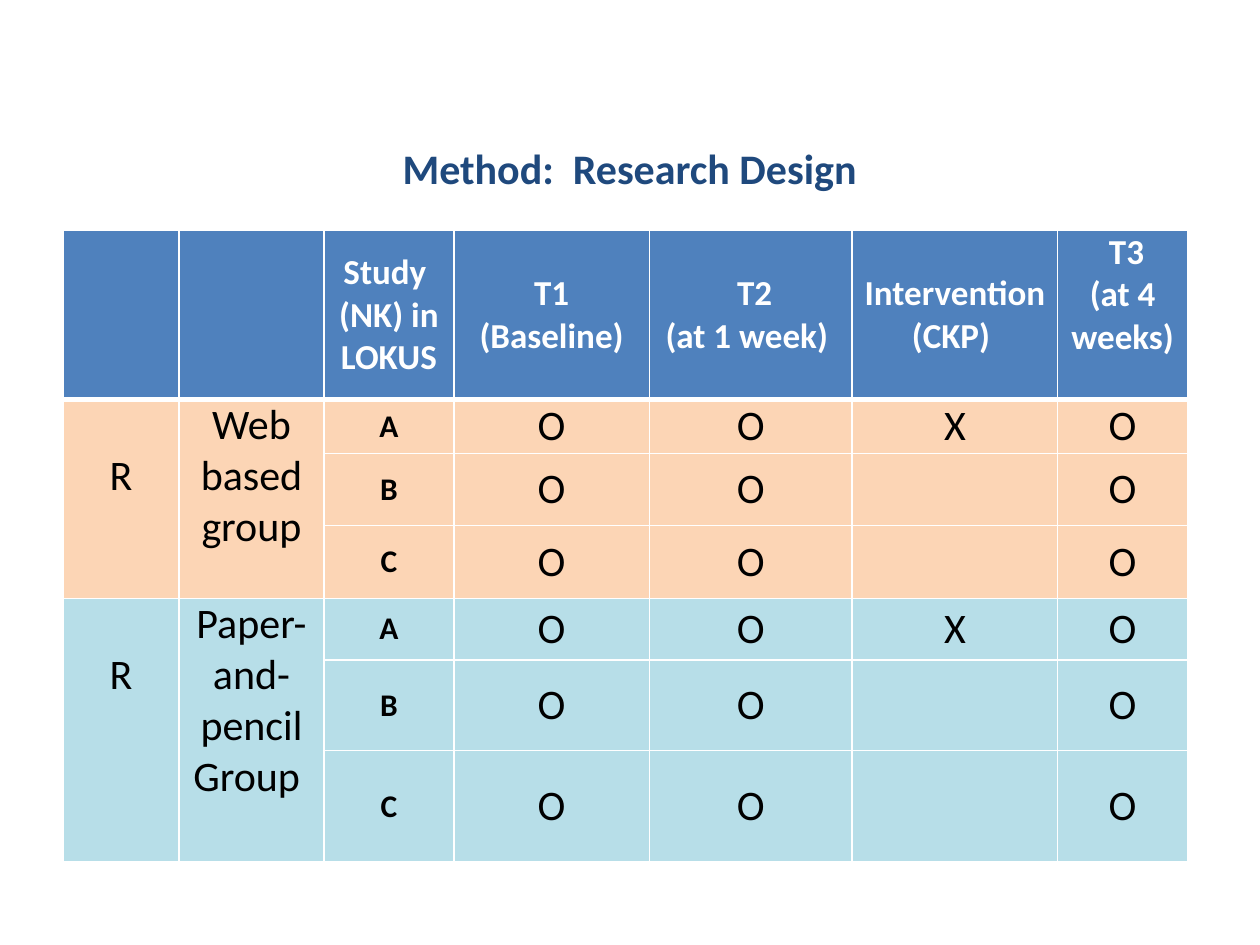
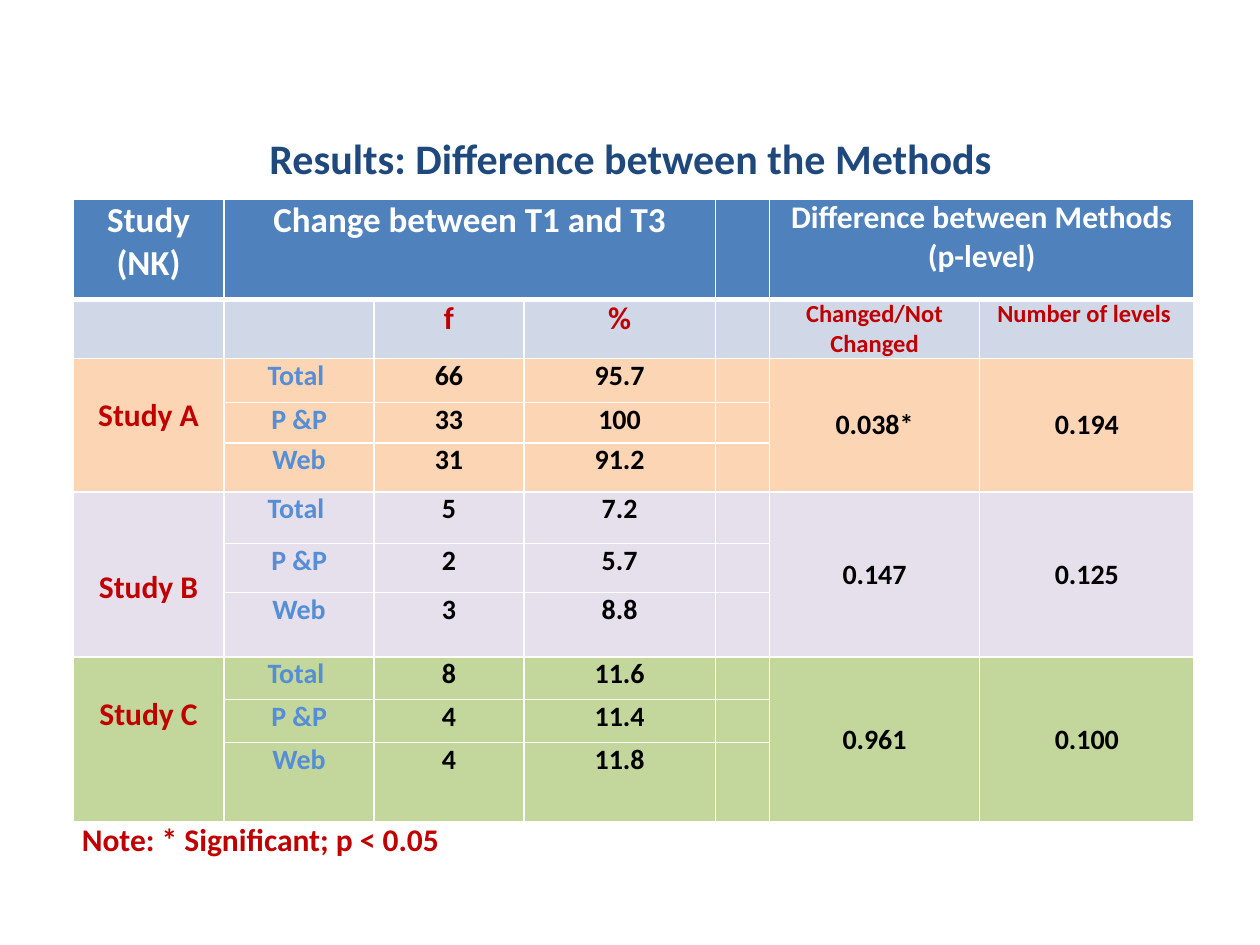
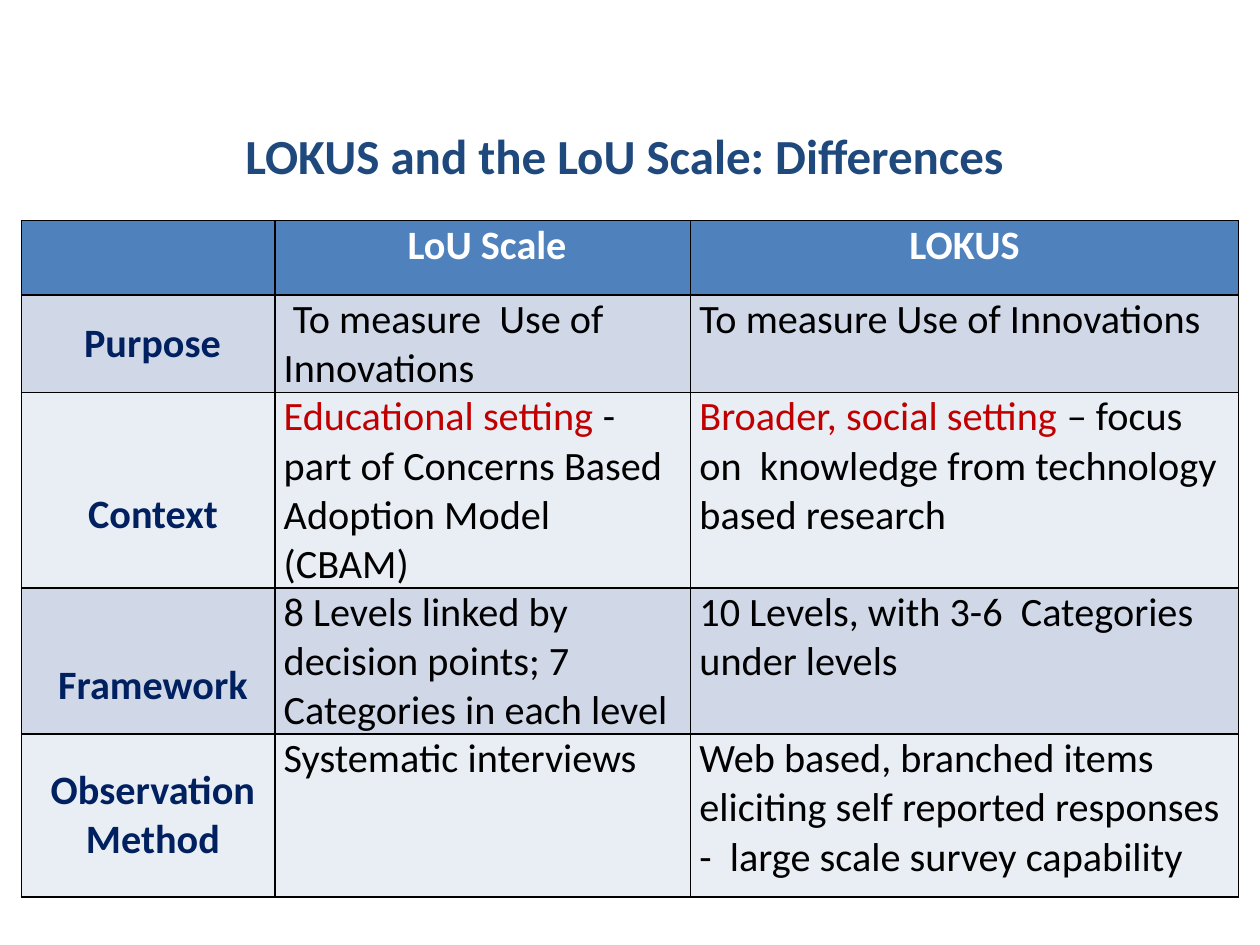
from dataclasses import dataclass, replace
from typing import Optional

from lxml.etree import SubElement
from pptx import Presentation
from pptx.dml.color import RGBColor as Rgb
from pptx.enum.text import MSO_ANCHOR as Anchor, PP_ALIGN as Align
from pptx.oxml.ns import qn
from pptx.util import Cm, Pt

FONT = "Calibri"
COLORS = {
    "white": "FFFFFF", "black": "000000", "title": "1F497D", "header": "4F81BD",
    "peach": "FCD5B5", "aqua": "B7DEE8", "lilac": "E6E0EC", "green": "C3D69B",
    "band": "D0D8E8", "pale": "E9EDF4", "red": "C00000", "blue": "558ED5",
    "navy": "002060",
}
SIDE_MARGIN = 0.18
LINE_FACTOR = 1.22 * 2.54 / 72  # line height in cm for each point of text size


@dataclass(frozen=True)
class Style:
    size: int
    color: str = "black"
    bold: bool = True
    align: Align = Align.CENTER
    anchor: Anchor = Anchor.TOP


@dataclass(frozen=True)
class Run:
    text: str
    color: Optional[str] = None


@dataclass(frozen=True)
class Cell:
    """A table cell; a paragraph is a string or a tuple of runs."""
    style: Style
    fill: Optional[str]
    paragraphs: tuple = ()
    rows: int = 1
    columns: int = 1
    lines_above: int = 0
    lines_below: int = 0
    indent: float = 0


@dataclass(frozen=True)
class Title:
    text: str
    left: float
    top: float
    width: float
    height: float
    size: int = 24
    wrap: bool = False


@dataclass(frozen=True)
class Grid:
    left: float
    top: float
    widths: tuple
    heights: tuple
    cells: list
    border: str = "white"
    header_rule: float = 3


# Shared drawing
def write_paragraphs(frame, paragraphs: tuple, style: Style) -> None:
    for index, content in enumerate(paragraphs):
        paragraph = frame.add_paragraph() if index else frame.paragraphs[0]
        paragraph.alignment = style.align
        runs = (Run(content),) if isinstance(content, str) else content
        for part in runs:
            run = paragraph.add_run()
            run.text = part.text
            run.font.name = FONT
            run.font.size = Pt(style.size)
            run.font.bold = style.bold
            run.font.color.rgb = Rgb.from_string(COLORS[part.color or style.color])


def draw_title(slide, title: Title) -> None:
    box = slide.shapes.add_textbox(
        Cm(title.left), Cm(title.top), Cm(title.width), Cm(title.height))
    frame = box.text_frame
    frame.word_wrap = title.wrap
    frame.vertical_anchor = Anchor.MIDDLE
    write_paragraphs(frame, (title.text,), Style(title.size, "title"))


def draw_borders(table_cell, color: str, top: float, bottom: float) -> None:
    properties = table_cell._tc.get_or_add_tcPr()
    for side, width in (("L", 1), ("R", 1), ("T", top), ("B", bottom)):
        line = SubElement(properties, qn(f"a:ln{side}"), w=str(Pt(width)))
        solid = SubElement(line, qn("a:solidFill"))
        SubElement(solid, qn("a:srgbClr"), val=COLORS[color])


def fill_cell(table_cell, cell: Cell) -> None:
    style = cell.style
    line = style.size * LINE_FACTOR
    table_cell.margin_left = Cm(SIDE_MARGIN + cell.indent)
    table_cell.margin_right = Cm(SIDE_MARGIN)
    table_cell.margin_top = Cm(cell.lines_above * line)
    table_cell.margin_bottom = Cm(cell.lines_below * line)
    table_cell.vertical_anchor = style.anchor
    write_paragraphs(table_cell.text_frame, cell.paragraphs, style)


def draw_table(slide, grid: Grid) -> None:
    table = slide.shapes.add_table(
        len(grid.heights), len(grid.widths), Cm(grid.left), Cm(grid.top),
        Cm(sum(grid.widths)), Cm(sum(grid.heights))).table
    table.horz_banding = False
    for column, width in zip(table.columns, grid.widths):
        column.width = Cm(width)
    for row, height in zip(table.rows, grid.heights):
        row.height = Cm(height)

    for row, cells in enumerate(grid.cells):
        for column, cell in enumerate(cells):
            if cell is None:  # covered by a merged neighbour
                continue
            for r in range(row, row + cell.rows):
                for c in range(column, column + cell.columns):
                    part = table.cell(r, c)
                    draw_borders(part, grid.border,
                                 grid.header_rule if r == 1 else 1,
                                 grid.header_rule if r == 0 else 1)
                    if cell.fill:
                        part.fill.solid()
                        part.fill.fore_color.rgb = Rgb.from_string(COLORS[cell.fill])
                    else:
                        part.fill.background()
            origin = table.cell(row, column)
            if cell.rows * cell.columns > 1:
                origin.merge(table.cell(row + cell.rows - 1, column + cell.columns - 1))
            fill_cell(origin, cell)


# Slide 1: research design
def design_grid() -> Grid:
    header = Style(20, "white", anchor=Anchor.MIDDLE)
    group = Style(24, bold=False)
    mark = replace(group, anchor=Anchor.MIDDLE)
    letter = Style(18, anchor=Anchor.MIDDLE)
    headings = ((), (), ("Study  (NK) in LOKUS",), ("T1 (Baseline)",),
                (" T2", "(at 1 week) "), ("Intervention (CKP) ",))
    cells = [[Cell(header, "header", heading) for heading in headings]
             + [Cell(header, "header", (" T3", "(at 4 weeks)"), lines_below=1)]]
    for name, fill in (("Web based group", "peach"), ("Paper-and-pencil Group ", "aqua")):
        for study in "ABC":
            first = study == "A"
            lead = [Cell(group, fill, ("R",), rows=3, lines_above=1),
                    Cell(group, fill, (name,), rows=3)] if first else [None, None]
            marks = (("O",), ("O",), ("X",) if first else (), ("O",))
            cells.append(lead + [Cell(letter, fill, (study,))]
                         + [Cell(mark, fill, text) for text in marks])
    return Grid(1.27, 4.65, (2.34, 2.92, 2.62, 3.94, 4.09, 4.14, 2.62),
                (3.1, 1.09, 1.45, 1.47, 1.24, 1.83, 2.24), cells)


# Slide 2: difference between the methods
@dataclass(frozen=True)
class Study:
    name: str
    fill: str
    lines_above: int
    changes: tuple
    levels: tuple


STUDIES = (
    Study("Study A", "peach", 1, (("66", "95.7"), ("33", "100"), ("31", "91.2")),
          ("0.038*", "0.194")),
    Study("Study B", "lilac", 2, (("5", "7.2"), ("2", "5.7"), ("3", "8.8")),
          ("0.147", "0.125")),
    Study("Study C", "green", 1, (("8", "11.6"), ("4", "11.4"), ("4", "11.8")),
          ("0.961", "0.100")),
)


def results_grid() -> Grid:
    header, small_header = Style(20, "white"), Style(18, "white")
    symbol, caption = Style(18, "red"), Style(14, "red")
    method, value = Style(16, "blue"), Style(16)
    level = replace(value, anchor=Anchor.MIDDLE)
    cells = [
        [Cell(header, "header", ("Study (NK)",)),
         Cell(header, "header", ("Change between T1 and T3",), columns=3), None, None,
         Cell(header, "header"),
         Cell(small_header, "header", ("Difference between Methods", "(p-level)"),
              columns=2), None],
        [Cell(style, "band", text) for style, text in (
            (symbol, ()), (symbol, ()), (symbol, ("f",)), (symbol, ("%",)), (symbol, ()),
            (caption, ("Changed/Not Changed",)), (caption, ("Number of levels ",)))],
    ]
    for study in STUDIES:
        for index, name in enumerate(("Total ", "P &P", "Web")):
            lead, tail = [None], [None, None]
            if index == 0:
                lead = [Cell(symbol, study.fill, (study.name,), rows=3,
                             lines_above=study.lines_above)]
                tail = [Cell(level, study.fill, (text,), rows=3) for text in study.levels]
            cells.append(lead + [Cell(method, study.fill, (name,))]
                         + [Cell(value, study.fill, (text,)) for text in study.changes[index]]
                         + [Cell(value, study.fill)] + tail)
    note = Style(18, "red", align=Align.LEFT)
    cells.append([Cell(note, None, ("Note: * Significant; p < 0.05",), columns=7)])
    return Grid(1.47, 4.01, (3.05, 3.02, 3.02, 3.86, 1.09, 4.24, 4.32),
                (2.03, 1.02, 0.89, 0.81, 0.99, 1.04, 0.99, 1.3, 0.86, 0.86, 1.6, 1.6),
                cells)


# Slide 3: comparison of the two scales
@dataclass(frozen=True)
class Aspect:
    name: str
    lou: tuple
    lokus: tuple
    lines_above: int = 0
    indent: float = 0


ASPECTS = (
    Aspect(" Purpose", (Run(" To measure  Use of Innovations"),),
           (Run("To measure Use of Innovations"),)),
    Aspect("Context",
           (Run("Educational setting ", "red"),
            Run("- part of Concerns Based Adoption Model (CBAM)")),
           (Run("Broader, social setting ", "red"),
            Run("– focus on  knowledge from technology based research")), 1, 0.2),
    Aspect("Framework",
           (Run("8 Levels linked by decision points; 7 Categories in each level"),),
           (Run("10 Levels, with 3-6  Categories under levels"),), 1, 0.2),
    Aspect("Observation Method", (Run("Systematic interviews"),),
           (Run("Web based, branched items eliciting self reported responses "
                "-  large scale survey capability"),), 0, 0.2),
)


def scales_grid() -> Grid:
    header = Style(23, "white")
    label = Style(23, "navy", anchor=Anchor.MIDDLE)
    body = Style(23, bold=False, align=Align.LEFT)
    cells = [[Cell(header, "header", text) for text in ((), (" LoU Scale",), ("LOKUS",))]]
    for index, aspect in enumerate(ASPECTS):
        fill = "pale" if index % 2 else "band"
        cells.append([
            Cell(label, fill, (aspect.name,), lines_above=aspect.lines_above,
                 indent=aspect.indent),
            Cell(body, fill, (aspect.lou,)),
            Cell(body, fill, (aspect.lokus,))])
    return Grid(0.43, 4.45, (5.11, 8.38, 11.05), (1.5, 1.96, 3.94, 2.95, 3.28),
                cells, border="black", header_rule=1)


def main() -> None:
    presentation = Presentation()
    presentation.slide_width, presentation.slide_height = Cm(25.4), Cm(19.05)
    pages = (
        (Title("Method:  Research Design", 7.82, 2.74, 9.75, 1.27), design_grid()),
        (Title("Results: Difference between the Methods", 5.08, 2.54, 15.27, 1.27),
         results_grid()),
        (Title("LOKUS and the LoU Scale: Differences ", 1.27, 2.24, 22.86, 1.78, 28, True),
         scales_grid()),
    )
    for title, grid in pages:
        slide = presentation.slides.add_slide(presentation.slide_layouts[6])
        draw_title(slide, title)
        draw_table(slide, grid)
    presentation.save("out.pptx")


if __name__ == "__main__":
    main()
